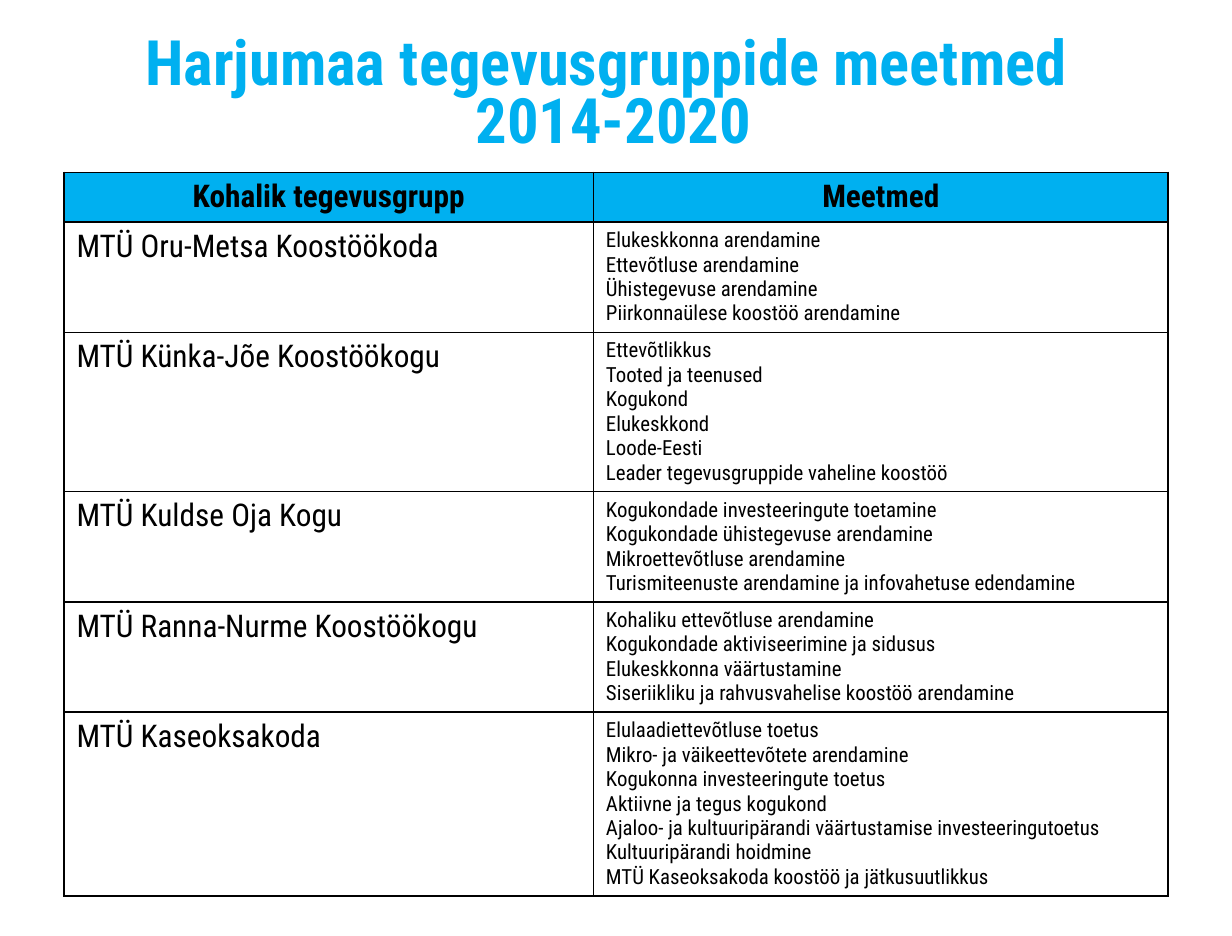
from lxml import etree
from pptx import Presentation
from pptx import util as u
from pptx.dml.color import RGBColor
from pptx.enum import text
from pptx.oxml import ns

GROUPS = [
    ("MTÜ Oru-Metsa Koostöökoda", [
        "Elukeskkonna arendamine",
        "Ettevõtluse arendamine",
        "Ühistegevuse arendamine",
        "Piirkonnaülese koostöö arendamine"]),
    ("MTÜ Künka-Jõe Koostöökogu", [
        "Ettevõtlikkus",
        "Tooted ja teenused",
        "Kogukond",
        "Elukeskkond",
        "Loode-Eesti",
        "Leader tegevusgruppide vaheline koostöö"]),
    ("MTÜ Kuldse Oja Kogu", [
        "Kogukondade investeeringute toetamine",
        "Kogukondade ühistegevuse arendamine",
        "Mikroettevõtluse arendamine",
        "Turismiteenuste arendamine ja infovahetuse edendamine"]),
    ("MTÜ Ranna-Nurme Koostöökogu", [
        "Kohaliku ettevõtluse arendamine",
        "Kogukondade aktiviseerimine ja sidusus",
        "Elukeskkonna väärtustamine",
        "Siseriikliku ja rahvusvahelise koostöö arendamine"]),
    ("MTÜ Kaseoksakoda", [
        "Elulaadiettevõtluse toetus",
        "Mikro- ja väikeettevõtete arendamine",
        "Kogukonna investeeringute toetus",
        "Aktiivne ja tegus kogukond",
        "Ajaloo- ja kultuuripärandi väärtustamise investeeringutoetus",
        "Kultuuripärandi hoidmine",
        "MTÜ Kaseoksakoda koostöö ja jätkusuutlikkus"]),
]


def paint(hue):
    return RGBColor.from_string(hue)


def write(frame, lines, size, hue="000000", bold=False, align="LEFT", gap=1.0):
    for i, line in enumerate(lines):
        para = frame.add_paragraph() if i else frame.paragraphs[0]
        para.text = line
        para.alignment = getattr(text.PP_ALIGN, align)
        para.line_spacing = gap
        for run in para.runs:
            font = run.font
            font.name, font.size, font.bold = "Roboto Condensed", u.Pt(size), bold
            font.color.rgb = paint(hue)


class Deck:
    """Slide builder with one accent colour and one ink colour."""

    accent, ink = "00B0F0", "000000"

    def __init__(self, wide, high):
        self.show = Presentation()
        self.show.slide_width, self.show.slide_height = u.Pt(wide), u.Pt(high)
        self.slide = self.show.slides.add_slide(self.show.slide_layouts[5])

    def title(self, words, left, top, wide, high):
        box = self.slide.shapes.title
        box.left, box.top = u.Pt(left), u.Pt(top)
        box.width, box.height = u.Pt(wide), u.Pt(high)
        frame = box.text_frame
        frame.margin_left = frame.margin_right = 0
        frame.margin_top = frame.margin_bottom = 0
        frame.word_wrap = True
        frame.auto_size = text.MSO_AUTO_SIZE.NONE
        frame.vertical_anchor = text.MSO_ANCHOR.MIDDLE
        write(frame, [words], 36, self.accent, True, "CENTER", 0.77)

    def border(self, cell):
        props = cell._tc.get_or_add_tcPr()
        for i, side in enumerate(("lnL", "lnR", "lnT", "lnB")):
            line = etree.Element(ns.qn("a:" + side), w=str(u.Pt(1)))
            fill = etree.SubElement(line, ns.qn("a:solidFill"))
            etree.SubElement(fill, ns.qn("a:srgbClr"), val=self.ink)
            props.insert(i, line)

    def cell(self, cell, lines, size, head=False):
        if head:
            cell.fill.solid()
            cell.fill.fore_color.rgb = paint(self.accent)
        else:
            cell.fill.background()
        self.border(cell)
        write(cell.text_frame, lines, size, self.ink, head,
              "CENTER" if head else "LEFT")

    def table(self, heads, groups, left, top, cols):
        highs = [28.5] + [7 + 14.1 * len(items) for _, items in groups]
        grid = self.slide.shapes.add_table(
            len(highs), len(cols), u.Pt(left), u.Pt(top),
            u.Pt(sum(cols)), u.Pt(sum(highs))).table
        for col, wide in zip(grid.columns, cols):
            col.width = u.Pt(wide)
        for row, high in zip(grid.rows, highs):
            row.height = u.Pt(high)
        for i, head in enumerate(heads):
            self.cell(grid.cell(0, i), [head], 18, True)
        for i, (name, items) in enumerate(groups, 1):
            self.cell(grid.cell(i, 0), [name], 18)
            self.cell(grid.cell(i, 1), items, 12)


def main():
    deck = Deck(708.5, 538.5)
    deck.title("Harjumaa tegevusgruppide meetmed \v2014-2020", 39.6, 23.8, 626.4, 64)
    deck.table(["Kohalik tegevusgrupp", "Meetmed"], GROUPS, 36.8, 99.2, [304.5, 330.5])
    deck.show.save("out.pptx")


if __name__ == "__main__":
    main()
